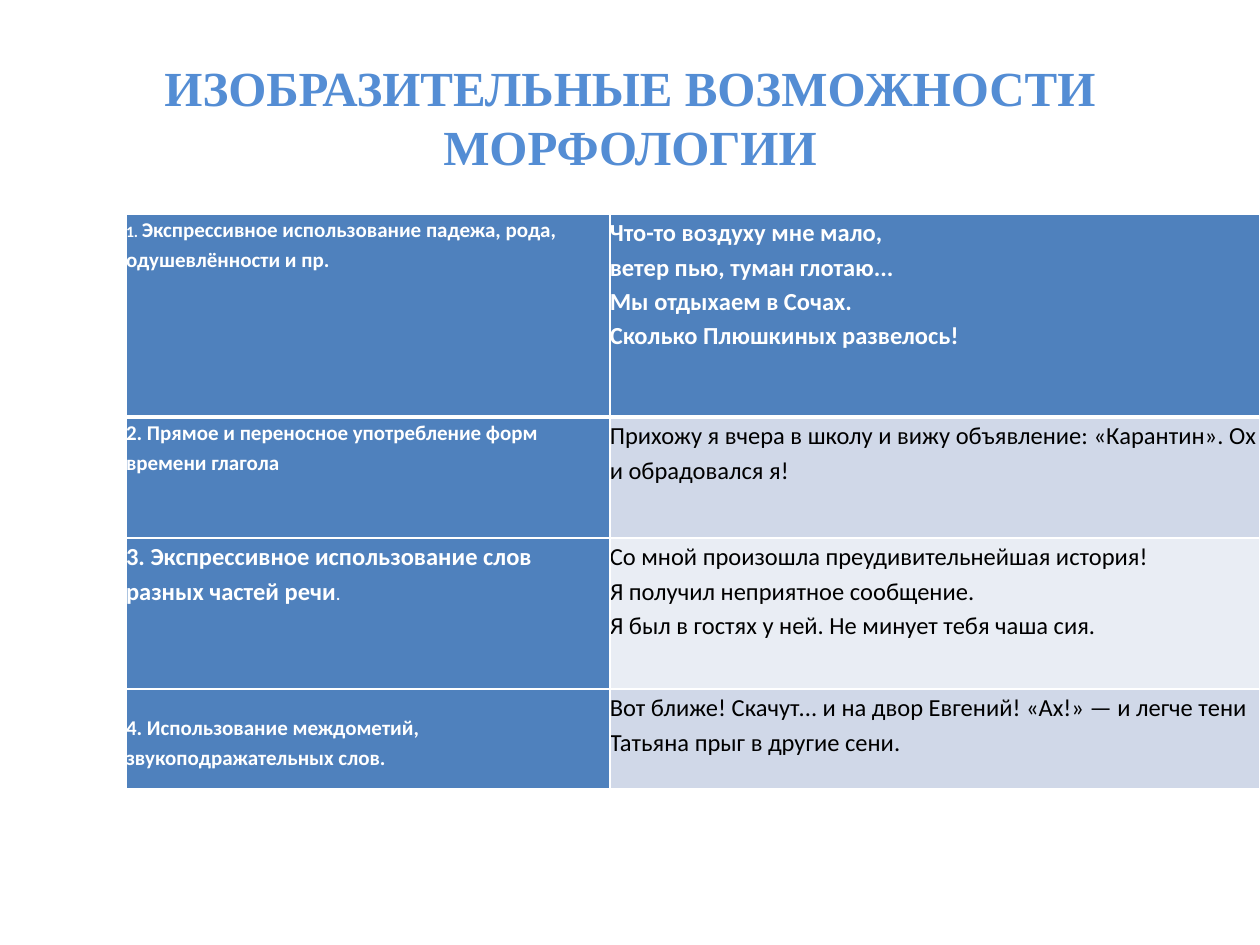
from dataclasses import dataclass

from lxml import etree
from pptx import Presentation
from pptx import util as u
from pptx.dml.color import RGBColor
from pptx.enum import text
from pptx.oxml import ns


@dataclass(frozen=True)
class Theme:
    heading_font: str = "Times New Roman"
    body_font: str = "Calibri"
    heading: str = "548DD4"
    accent: str = "4F81BD"
    bands: tuple = ("D0D8E8", "E9EDF4")
    light: str = "FFFFFF"
    dark: str = "000000"
    title_size: int = 28
    large: int = 14
    medium: int = 12
    small: int = 9
    thin: int = 1
    thick: int = 3


THEME = Theme()
SLIDE_WIDTH, SLIDE_HEIGHT = 10, 7.5
TABLE_LEFT, TABLE_TOP = 1, 1.7
COLUMN_WIDTHS = (3.84, 5.16)
ROW_HEIGHTS = (1.61, 0.96, 1.2, 0.79)
LAST_TOPIC_INSET = 0.18

# Each row: the topic as (words, size) runs, then the lines of the example.
ROWS = [
    ([("1. ", THEME.small),
      ("Экспрессивное использование падежа, рода, одушевлённости и пр.", THEME.medium)],
     ["Что-то воздуху мне мало,",
      "ветер пью, туман глотаю...",
      "Мы отдыхаем в Сочах.",
      "Сколько Плюшкиных развелось!"]),
    ([("2. Прямое и переносное употребление форм времени глагола", THEME.medium)],
     ["Прихожу я вчера в школу и вижу объявление: «Карантин». Ох и обрадовался я!"]),
    ([("3. Экспрессивное использование слов разных частей речи", THEME.large),
      (".", THEME.small)],
     ["Со мной произошла преудивительнейшая история!",
      "Я получил неприятное сообщение.",
      "Я был в гостях у ней. Не минует тебя чаша сия."]),
    ([("4. Использование междометий, звукоподражательных слов.", THEME.medium)],
     ["Вот ближе! Скачут... и на двор Евгений! «Ах!» — и легче тени "
      "Татьяна прыг в другие сени."]),
]


def add_run(paragraph, words, color, **font_format):
    run = paragraph.add_run()
    run.text = words
    run.font.color.rgb = RGBColor.from_string(color)
    for attribute, value in font_format.items():
        setattr(run.font, attribute, value)


def add_title(slide, words):
    title = slide.shapes.title
    place = {"left": 0.05 * SLIDE_WIDTH, "top": 0.04 * SLIDE_HEIGHT,
             "width": 0.9 * SLIDE_WIDTH, "height": SLIDE_HEIGHT / 6}
    for attribute, value in place.items():
        setattr(title, attribute, u.Inches(value))
    title.text_frame.vertical_anchor = text.MSO_ANCHOR.MIDDLE
    paragraph = title.text_frame.paragraphs[0]
    paragraph.alignment = text.PP_ALIGN.CENTER
    add_run(paragraph, words, THEME.heading, name=THEME.heading_font,
            size=u.Pt(THEME.title_size), bold=True)


def set_borders(cell, widths):
    """Draw the cell's edges; widths maps L, R, T, B to points, in that order."""
    properties = cell._tc.get_or_add_tcPr()
    for side, width in widths.items():
        line = etree.SubElement(properties, ns.qn(f"a:ln{side}"), w=str(u.Pt(width)))
        fill = etree.SubElement(line, ns.qn("a:solidFill"))
        etree.SubElement(fill, ns.qn("a:srgbClr"), val=THEME.light)


def fill_cell(cell, paragraphs, fill, color, bold, edges):
    """Write a cell; each paragraph is a list of (words, size) runs."""
    set_borders(cell, edges)
    cell.fill.solid()
    cell.fill.fore_color.rgb = RGBColor.from_string(fill)
    for side in ("left", "right", "top", "bottom"):
        setattr(cell, f"margin_{side}", 0)
    frame = cell.text_frame
    for index, runs in enumerate(paragraphs):
        paragraph = frame.add_paragraph() if index else frame.paragraphs[0]
        paragraph.line_spacing = 1.15
        for words, size in runs:
            add_run(paragraph, words, color, name=THEME.body_font,
                    size=u.Pt(size), bold=bold)


def add_examples_table(slide):
    table = slide.shapes.add_table(
        len(ROWS), len(COLUMN_WIDTHS), u.Inches(TABLE_LEFT), u.Inches(TABLE_TOP),
        u.Inches(sum(COLUMN_WIDTHS)), u.Inches(sum(ROW_HEIGHTS))).table
    table.first_col = True
    for column, width in zip(table.columns, COLUMN_WIDTHS):
        column.width = u.Inches(width)
    for row, height in zip(table.rows, ROW_HEIGHTS):
        row.height = u.Inches(height)

    for index, (topic, example) in enumerate(ROWS):
        header = index == 0
        edges = {"L": THEME.thin, "R": THEME.thin,
                 "T": THEME.thick if index == 1 else THEME.thin,
                 "B": THEME.thick if header else THEME.thin}
        fill_cell(table.cell(index, 0), [topic], THEME.accent, THEME.light, True, edges)
        fill_cell(table.cell(index, 1), [[(line, THEME.large)] for line in example],
                  THEME.accent if header else THEME.bands[(index - 1) % 2],
                  THEME.light if header else THEME.dark, header, edges)
    table.cell(len(ROWS) - 1, 0).margin_top = u.Inches(LAST_TOPIC_INSET)


def main():
    presentation = Presentation()
    presentation.slide_width = u.Inches(SLIDE_WIDTH)
    presentation.slide_height = u.Inches(SLIDE_HEIGHT)
    slide = presentation.slides.add_slide(
        presentation.slide_layouts.get_by_name("Title Only"))
    add_title(slide, "ИЗОБРАЗИТЕЛЬНЫЕ ВОЗМОЖНОСТИ МОРФОЛОГИИ")
    add_examples_table(slide)
    presentation.save("out.pptx")


if __name__ == "__main__":
    main()
